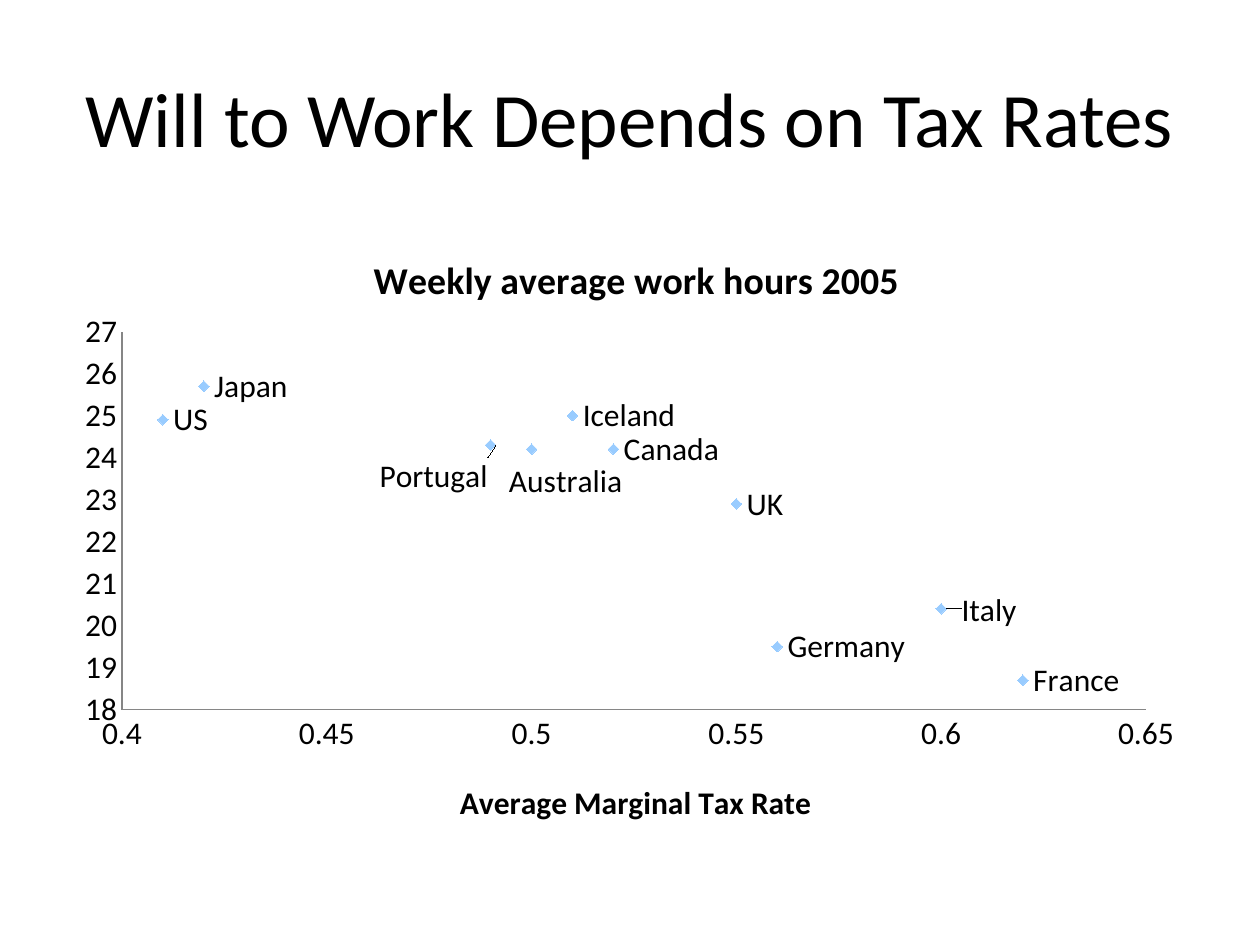
from lxml import etree
from pptx import Presentation
from pptx.chart.data import XyChartData
from pptx.dml.color import RGBColor
from pptx.enum.chart import XL_CHART_TYPE, XL_LABEL_POSITION, XL_MARKER_STYLE, XL_TICK_MARK
from pptx.enum.text import MSO_ANCHOR, PP_ALIGN
from pptx.oxml.ns import qn
from pptx.util import Emu, Pt

PX = 914400 / 126
SCATTER = XL_CHART_TYPE.XY_SCATTER
DIAMOND = XL_MARKER_STYLE.DIAMOND
RIGHT = XL_LABEL_POSITION.RIGHT
NO_TICK = XL_TICK_MARK.NONE
FONT, BLACK, GREY, BLUE = "Calibri", "000000", "868686", "99CCFF"
CHART_LEFT, CHART_TOP, CHART_WIDTH, CHART_HEIGHT = 63, 220, 1134, 624


def write_text(frame, text, size=18, bold=False, color=BLACK, align=PP_ALIGN.CENTER):
    para = frame.paragraphs[0]
    para.alignment = align
    span = para.add_run()
    span.text = text
    span.font.name = FONT
    span.font.size = Pt(size)
    span.font.bold = bold
    span.font.color.rgb = RGBColor.from_string(color)


def place(element, index=1, **settings):
    """Give a chart part a manual layout, as fractions of the chart."""
    layout = element.find(qn("c:layout"))
    if layout is None:
        layout = etree.Element(qn("c:layout"))
        element.insert(index, layout)
    manual = etree.SubElement(layout, qn("c:manualLayout"))
    for name, value in settings.items():
        etree.SubElement(manual, qn("c:" + name)).set("val", str(value))


deck = Presentation()
deck.slide_width, deck.slide_height = Emu(round(1260 * PX)), Emu(round(945 * PX))
page = deck.slides.add_slide(deck.slide_layouts[6])

# Slide title
box = page.shapes.add_textbox(*(Emu(round(n * PX)) for n in (63, 38, 1134, 157)))
box.text_frame.word_wrap = True
box.text_frame.vertical_anchor = MSO_ANCHOR.MIDDLE
write_text(box.text_frame, "Will to Work Depends on Tax Rates", size=44)

# Country, tax rate, weekly hours, label shift in px
countries = [
    ("France", 0.62, 18.7, None),
    ("Italy", 0.6, 20.4, (10, 2)),
    ("Germany", 0.56, 19.5, None),
    ("UK", 0.55, 22.9, None),
    ("Canada", 0.52, 24.2, None),
    ("Iceland", 0.51, 25, None),
    ("Australia", 0.5, 24.2, (-33, 32)),
    ("Portugal", 0.49, 24.3, (-121, 32)),
    ("Japan", 0.42, 25.7, None),
    ("US", 0.41, 24.9, None),
]
data = XyChartData()
points = data.add_series("Series 1")
for country, rate, hours, shift in countries:
    points.add_data_point(rate, hours)

# Scatter chart
bounds = (CHART_LEFT, CHART_TOP, CHART_WIDTH, CHART_HEIGHT)
chart = page.shapes.add_chart(SCATTER, *(Emu(round(n * PX)) for n in bounds), data).chart
chart.has_legend = False
chart.font.name = FONT
chart.font.size = Pt(18)
chart.font.color.rgb = RGBColor.from_string(BLACK)
chart.plots[0].vary_by_categories = False
plot_area = chart.element.find(".//" + qn("c:plotArea"))
place(plot_area, 0, layoutTarget="inner", xMode="edge", yMode="edge",
      x=0.052, y=0.179, w=0.903, h=0.606)

# Axes
for axis, low, high, step, number_format in [
    (chart.category_axis, 0.4, 0.65, 0.05, "General"),
    (chart.value_axis, 18, 27, 1, "0"),
]:
    axis.minimum_scale, axis.maximum_scale, axis.major_unit = low, high, step
    axis.has_major_gridlines = False
    axis.major_tick_mark = axis.minor_tick_mark = NO_TICK
    axis.tick_labels.number_format = number_format
    axis.tick_labels.number_format_is_linked = False
    axis.format.line.color.rgb = RGBColor.from_string(GREY)
    axis.format.line.width = Pt(0.75)

# Chart title and axis title
chart.has_title = True
write_text(chart.chart_title.text_frame, "Weekly average work hours 2005", size=21.6, bold=True)
write_text(chart.category_axis.axis_title.text_frame, "Average Marginal Tax Rate", bold=True)
titles = chart.element.findall(".//" + qn("c:title"))
for title, (left, top) in zip(titles, [(0.268, 0.042), (0.345, 0.89)]):
    place(title, xMode="edge", yMode="edge", x=left, y=top)

# Markers and country labels
series = chart.plots[0].series[0]
series.format.line.fill.background()
series.marker.style = DIAMOND
series.marker.size = 6
series.marker.format.fill.solid()
series.marker.format.fill.fore_color.rgb = RGBColor.from_string(BLUE)
series.marker.format.line.fill.background()
for index, (country, rate, hours, shift) in enumerate(countries):
    label = series.points[index].data_label
    write_text(label.text_frame, country)
    label.position = RIGHT
    if shift:
        element = chart.element.findall(".//" + qn("c:dLbl"))[index]
        place(element, x=round(shift[0] / CHART_WIDTH, 3), y=round(shift[1] / CHART_HEIGHT, 3))

deck.save("out.pptx")
